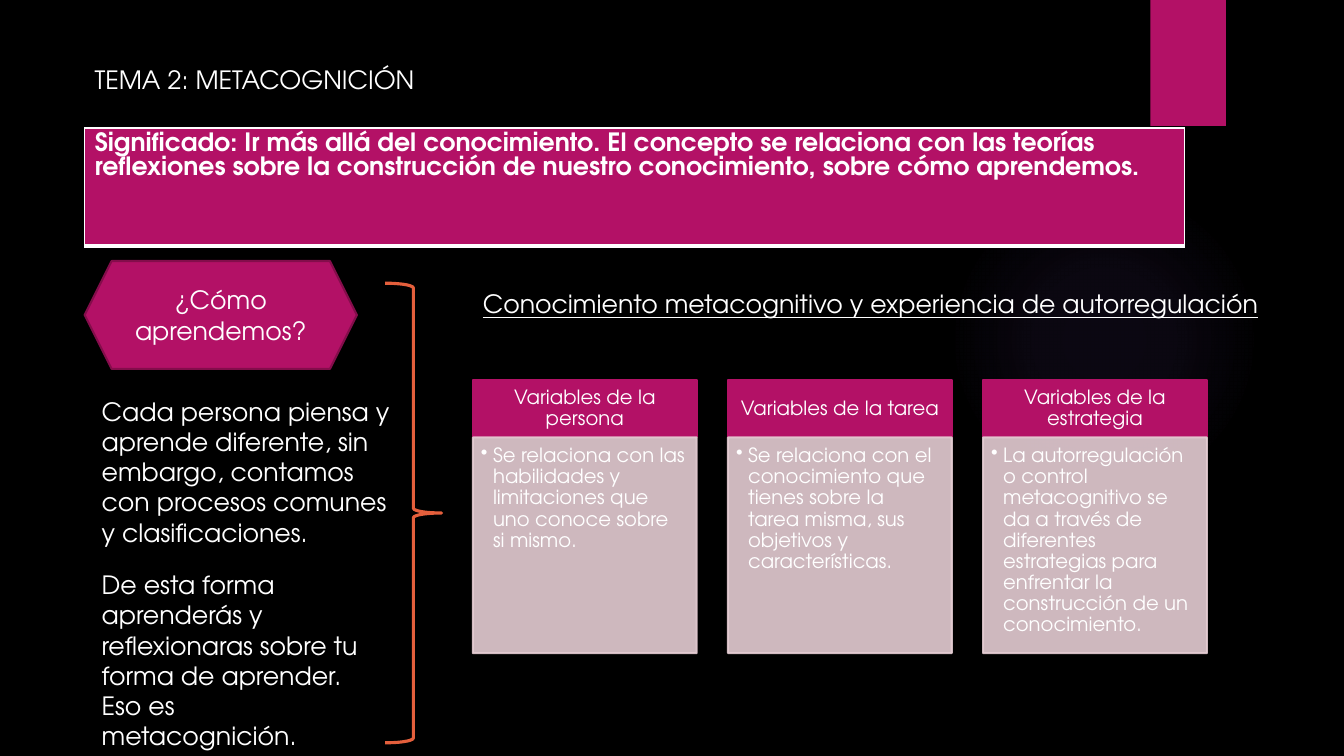
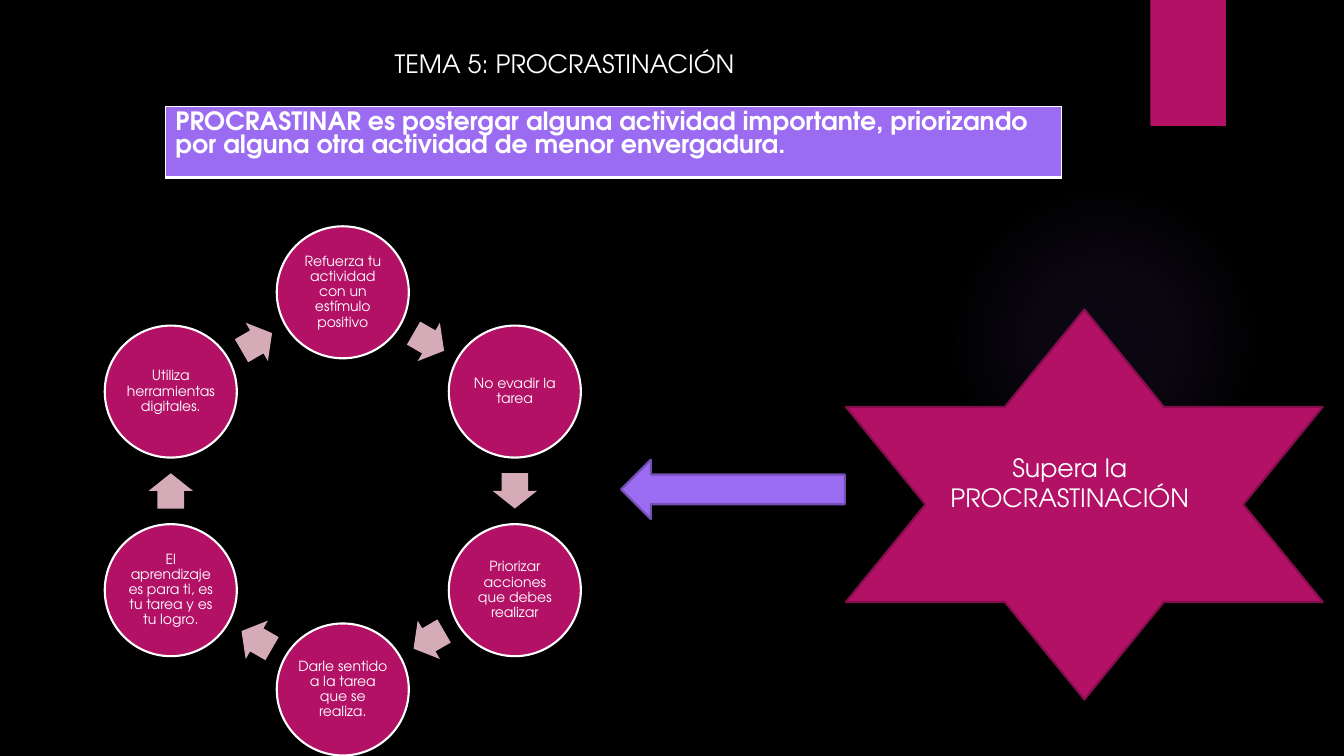
from math import cos, pi, radians, sin

from lxml.etree import SubElement
from pptx import Presentation
from pptx.dml.color import RGBColor
from pptx.enum.shapes import MSO_SHAPE
from pptx.enum.text import MSO_ANCHOR, PP_ALIGN
from pptx.oxml import parse_xml
from pptx.oxml.ns import nsdecls, qn
from pptx.util import Inches, Pt

FONT = "TeX Gyre Adventor"
BLACK, WHITE = "000000", "FFFFFF"
PINK, DARK_PINK, PALE_PINK, ROSE = "B31166", "840D4B", "E5CCD3", "D6ABB8"
VIOLET, DARK_VIOLET, ORANGE = "9B6BF2", "734FB3", "E45F3C"
CENTER, LEFT = PP_ALIGN.CENTER, PP_ALIGN.LEFT

CARDS = [
    ("Variables de la persona",
     "Se relaciona con las habilidades y limitaciones que uno conoce sobre si mismo.", 0.11),
    ("Variables de la tarea",
     "Se relaciona con el conocimiento que tienes sobre la tarea misma, sus objetivos "
     "y características.", 0.14),
    ("Variables de la estrategia",
     "La autorregulación o control metacognitivo se da a través de diferentes estrategias "
     "para enfrentar la construcción de un conocimiento.", 0.11),
]
STEPS = [
    "Refuerza tu actividad con un estímulo positivo",
    "No evadir la tarea",
    "Priorizar acciones que debes realizar",
    "Darle sentido a la tarea que se realiza.",
    "El aprendizaje es para ti, es tu tarea y es tu logro.",
    "Utiliza herramientas digitales.",
]


def color(value):
    """Return the colour for a hex string."""
    return RGBColor.from_string(value)


def box(*lengths):
    """Return lengths given in inches as a list of Inches."""
    return [Inches(n) for n in lengths]


def write(tf, text, align=LEFT, spacing=None, bullet=False, insets=None,
          anchor=MSO_ANCHOR.TOP, **fmt):
    """Write one formatted paragraph into a text frame."""
    frame = {"word_wrap": True, "vertical_anchor": anchor}
    if insets:
        sides = ("margin_left", "margin_top", "margin_right", "margin_bottom")
        frame.update(zip(sides, box(*insets)))
    for name, value in frame.items():
        setattr(tf, name, value)
    p = tf.paragraphs[0]
    if bullet:
        pPr = p._p.get_or_add_pPr()
        pPr.set("marL", str(Inches(0.12)))
        pPr.set("indent", str(-Inches(0.12)))
        SubElement(pPr, qn("a:buChar"), char="•")
    p.alignment = align
    p.line_spacing = spacing
    r = p.add_run()
    r.text = text
    for name, value in {"name": FONT, "size": Pt(18), **fmt}.items():
        setattr(r.font, name, value)
    r.font.color.rgb = color(WHITE)


def add_text(s, at, text, **fmt):
    """Add a text box."""
    write(s.shapes.add_textbox(*box(*at)).text_frame, text, **fmt)


def add_shape(s, kind, at, fill=None, line=None, width=1.5, alpha=None):
    """Add a preset shape with a flat fill and line."""
    sp = s.shapes.add_shape(kind, *box(*at))
    sp.shadow.inherit = False
    if fill:
        sp.fill.solid()
        sp.fill.fore_color.rgb = color(fill)
    else:
        sp.fill.background()
    if line:
        sp.line.color.rgb = color(line)
        sp.line.width = Pt(width)
    else:
        sp.line.fill.background()
    if alpha:
        for clr in sp._element.spPr.iter(qn("a:srgbClr")):
            SubElement(clr, qn("a:alpha"), val=str(alpha * 1000))
    return sp


def add_glow(s):
    """Add the faint round glow behind the content."""
    sp = add_shape(s, MSO_SHAPE.OVAL, (9.41, 1.83, 3.08, 3.08))
    stops = "".join(
        f'<a:gs pos="{pos}000"><a:srgbClr val="{VIOLET}"><a:alpha val="{alpha}000"/>'
        f'</a:srgbClr></a:gs>' for pos, alpha in ((0, 7), (36, 6), (69, 0)))
    spPr = sp._element.spPr
    grad = parse_xml(
        f'<a:gradFill {nsdecls("a")}><a:gsLst>{stops}</a:gsLst><a:path path="circle">'
        '<a:fillToRect l="50000" t="50000" r="50000" b="50000"/></a:path></a:gradFill>')
    spPr.replace(spPr.find(qn("a:noFill")), grad)


def add_banner(s, at, text, fill):
    """Add a one-cell table with a white border."""
    tbl = s.shapes.add_table(1, 1, *box(*at)).table
    tbl.first_row = tbl.horz_banding = False
    cell = tbl.cell(0, 0)
    tcPr = cell._tc.get_or_add_tcPr()
    for side, width in (("L", 1), ("R", 1), ("T", 1), ("B", 3)):
        ln = SubElement(tcPr, qn(f"a:ln{side}"), w=str(Pt(width)))
        SubElement(SubElement(ln, qn("a:solidFill")), qn("a:srgbClr"), val=WHITE)
    cell.fill.solid()
    cell.fill.fore_color.rgb = color(fill)
    write(cell.text_frame, text, bold=True)


def add_card(s, left, heading, body, right_inset):
    """Add a heading bar above a bulleted panel."""
    sp = add_shape(s, MSO_SHAPE.RECTANGLE, (left, 3.77, 2.22, 0.57), PINK, PINK)
    write(sp.text_frame, heading, align=CENTER, anchor=MSO_ANCHOR.MIDDLE, spacing=0.9,
          insets=(0.11, 0.06, 0.11, 0.06), size=Pt(14))
    sp = add_shape(s, MSO_SHAPE.RECTANGLE, (left, 4.34, 2.22, 2.14),
                   PALE_PINK, PALE_PINK, alpha=90)
    write(sp.text_frame, body, bullet=True, spacing=0.9,
          insets=(0.08, 0.08, right_inset, 0.12), size=Pt(14))


def add_cycle(s, cx, cy, radius, steps):
    """Add a ring of circles with an arrow between neighbours."""
    size, length, breadth = 1.31, 0.35, 0.44
    turn = 360 / len(steps)
    mid_radius = radius * cos(pi / len(steps))
    for i, step in enumerate(steps):
        a = radians(turn * i - 90)
        at = (cx + radius * cos(a) - size / 2, cy + radius * sin(a) - size / 2, size, size)
        sp = add_shape(s, MSO_SHAPE.OVAL, at, PINK, WHITE)
        write(sp.text_frame, step, align=CENTER, anchor=MSO_ANCHOR.MIDDLE, spacing=0.9,
              insets=[0.01] * 4, size=Pt(10))
        a = radians(turn * (i + 0.5) - 90)
        at = (cx + mid_radius * cos(a) - length / 2,
              cy + mid_radius * sin(a) - breadth / 2, length, breadth)
        sp = add_shape(s, MSO_SHAPE.RIGHT_ARROW, at, ROSE)
        sp.adjustments[0], sp.adjustments[1] = 0.6, 0.5
        sp.rotation = turn * (i + 0.5)


def add_slide(prs, title, at, align=LEFT):
    """Add a slide with the shared decoration and a title."""
    s = prs.slides.add_slide(prs.slide_layouts[6])
    add_glow(s)
    add_shape(s, MSO_SHAPE.RECTANGLE, (11.41, 0, 0.75, 1.25), PINK)
    add_text(s, at, title, align=align)
    return s


def build_metacognition(prs):
    """Build the metacognition slide."""
    s = add_slide(prs, "TEMA 2: METACOGNICIÓN", (0.84, 0.59, 10.91, 0.4))
    add_banner(s, (0.84, 1.27, 10.91, 1.17),
               "Significado: Ir más allá del conocimiento. El concepto se relaciona con las "
               "teorías reflexiones sobre la construcción de nuestro conocimiento, sobre "
               "cómo aprendemos.", PINK)
    sp = add_shape(s, MSO_SHAPE.HEXAGON, (0.84, 2.59, 2.7, 1.07), PINK, DARK_PINK)
    write(sp.text_frame, "¿Cómo aprendemos?", align=CENTER, anchor=MSO_ANCHOR.MIDDLE)
    add_text(s, (0.91, 3.88, 3.19, 1.62),
             "Cada persona piensa y aprende diferente, sin embargo, contamos con procesos "
             "comunes y clasificaciones.")
    add_text(s, (0.91, 5.6, 2.81, 1.92),
             "De esta forma aprenderás y reflexionaras sobre tu forma de aprender. "
             "Eso es metacognición.")
    add_shape(s, MSO_SHAPE.RIGHT_BRACE, (3.82, 2.81, 0.56, 4.56), line=ORANGE, width=2.25)
    add_text(s, (4.69, 2.81, 7.96, 0.4),
             "Conocimiento metacognitivo y experiencia de autorregulación", underline=True)
    for i, card in enumerate(CARDS):
        add_card(s, 4.69 + 2.53 * i, *card)


def build_procrastination(prs):
    """Build the procrastination slide."""
    s = add_slide(prs, "TEMA 5: PROCRASTINACIÓN", (0.98, 0.43, 9.24, 0.4), CENTER)
    add_banner(s, (1.64, 1.06, 8.89, 0.7),
               "PROCRASTINAR es postergar alguna actividad importante, priorizando por "
               "alguna otra actividad de menor envergadura.", VIOLET)
    add_cycle(s, 3.4, 4.87, 1.97, STEPS)
    add_shape(s, MSO_SHAPE.STAR_6_POINT, (8.39, 3.07, 4.73, 3.87), PINK, DARK_PINK)
    add_text(s, (9.24, 4.44, 2.74, 0.71), "Supera la PROCRASTINACIÓN", align=CENTER)
    add_shape(s, MSO_SHAPE.LEFT_ARROW, (6.16, 4.56, 2.22, 0.59), VIOLET, DARK_VIOLET)


def main():
    """Build and save the presentation."""
    prs = Presentation()
    prs.slide_width, prs.slide_height = box(13.33, 7.5)
    fill = prs.slide_master.background.fill
    fill.solid()
    fill.fore_color.rgb = color(BLACK)
    build_metacognition(prs)
    build_procrastination(prs)
    prs.save("out.pptx")


if __name__ == "__main__":
    main()
